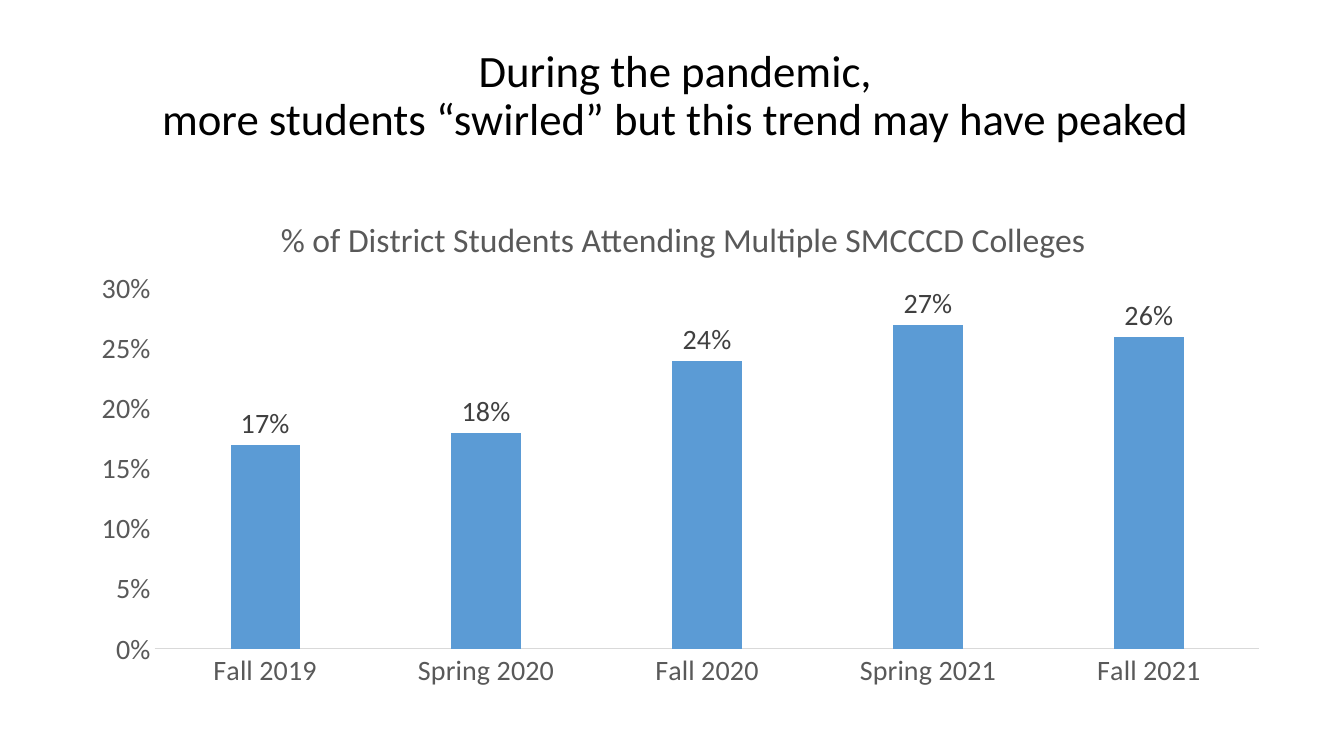
import pptx
import pptx.chart.data
import pptx.dml.color
import pptx.enum.chart
import pptx.enum.text
import pptx.oxml
import pptx.oxml.ns
import pptx.util
from pptx.util import Inches

# Content
HEADLINE = ["During the pandemic,", "more students “swirled” but this trend may have peaked"]
CHART_TITLE = "% of District Students Attending Multiple SMCCCD Colleges"
SHARES = {
    "Fall 2019": 0.17,
    "Spring 2020": 0.18,
    "Fall 2020": 0.24,
    "Spring 2021": 0.27,
    "Fall 2021": 0.26,
}

# Format values
HEADLINE_AREA = (1.04, 0.43, 11.32, 1.06)
CHART_AREA = (0.82, 1.84, 11.91, 5.11)
TITLE_START = {"x": 0.16, "y": 0.05}
PLOT_AREA = {"x": 0.06, "y": 0.2, "w": 0.92, "h": 0.7}
BLACK, DARK, GREY, RULE, BLUE = "000000", "404040", "595959", "D9D9D9", "5B9BD5"


def color(value):
    return pptx.dml.color.RGBColor.from_string(value)


def set_font(font, size, value):
    formats = {"name": "Calibri", "size": pptx.util.Pt(size), "bold": False}
    for name, setting in formats.items():
        setattr(font, name, setting)
    font.color.rgb = color(value)


def manual_layout(parts, inner=False):
    target = '<c:layoutTarget val="inner"/>' if inner else ""
    modes = "".join(f'<c:{key}Mode val="edge"/>' for key in "xy")
    values = "".join(f'<c:{key} val="{value}"/>' for key, value in parts.items())
    return pptx.oxml.parse_xml(
        f'<c:layout {pptx.oxml.ns.nsdecls("c")}><c:manualLayout>'
        f"{target}{modes}{values}</c:manualLayout></c:layout>"
    )


def place(element, layout):
    for old in element.findall(pptx.oxml.ns.qn("c:layout")):
        element.remove(old)
    text = element.find(pptx.oxml.ns.qn("c:tx"))
    element.insert(0 if text is None else 1, layout)


def add_headline(page):
    title = page.shapes.title
    title.left, title.top, title.width, title.height = map(Inches, HEADLINE_AREA)
    frame = title.text_frame
    frame.word_wrap = True
    frame.vertical_anchor = pptx.enum.text.MSO_ANCHOR.MIDDLE
    frame.text = "\v".join(HEADLINE)
    para = frame.paragraphs[0]
    para.alignment = pptx.enum.text.PP_ALIGN.CENTER
    para.line_spacing = 0.9
    for span in para.runs:
        set_font(span.font, 32, BLACK)


def add_share_chart(page):
    data = pptx.chart.data.CategoryChartData(number_format="0%")
    data.categories = list(SHARES)
    data.add_series("Series 1", list(SHARES.values()))
    kind = pptx.enum.chart.XL_CHART_TYPE.COLUMN_CLUSTERED
    chart = page.shapes.add_chart(kind, *map(Inches, CHART_AREA), data).chart
    set_font(chart.font, 20, BLACK)
    chart.has_legend = False

    # Chart title
    chart.has_title = True
    frame = chart.chart_title.text_frame
    frame.text = CHART_TITLE
    set_font(frame.paragraphs[0].runs[0].font, 24, GREY)
    chart.chart_title.include_in_layout = False

    # Columns and their labels
    plot = chart.plots[0]
    plot.gap_width, plot.overlap, plot.vary_by_categories = 219, -27, False
    fill = plot.series[0].format.fill
    fill.solid()
    fill.fore_color.rgb = color(BLUE)
    labels = plot.series[0].data_labels
    label_formats = {
        "show_value": True,
        "position": pptx.enum.chart.XL_LABEL_POSITION.OUTSIDE_END,
        "number_format": "0%",
        "number_format_is_linked": False,
    }
    for name, setting in label_formats.items():
        setattr(labels, name, setting)
    set_font(labels.font, 20, DARK)

    # Axes
    for axis in (chart.category_axis, chart.value_axis):
        axis.has_major_gridlines = False
        axis.major_tick_mark = axis.minor_tick_mark = pptx.enum.chart.XL_TICK_MARK.NONE
        set_font(axis.tick_labels.font, 20, GREY)
    baseline = chart.category_axis.format.line
    baseline.color.rgb = color(RULE)
    baseline.width = pptx.util.Pt(0.75)
    scale = chart.value_axis
    scale.minimum_scale, scale.maximum_scale, scale.major_unit = 0, 0.3, 0.05
    scale.format.line.fill.background()
    scale.tick_labels.number_format = "0%"
    scale.tick_labels.number_format_is_linked = False

    # Places of the title and the plot
    place(chart.chart_title._element, manual_layout(TITLE_START))
    plot_area = chart._chartSpace.chart.plotArea
    place(plot_area, manual_layout(PLOT_AREA, inner=True))


def main():
    deck = pptx.Presentation()
    deck.slide_width, deck.slide_height = Inches(13.33), Inches(7.5)
    page = deck.slides.add_slide(deck.slide_layouts[5])
    add_headline(page)
    add_share_chart(page)
    deck.save("out.pptx")


if __name__ == "__main__":
    main()
